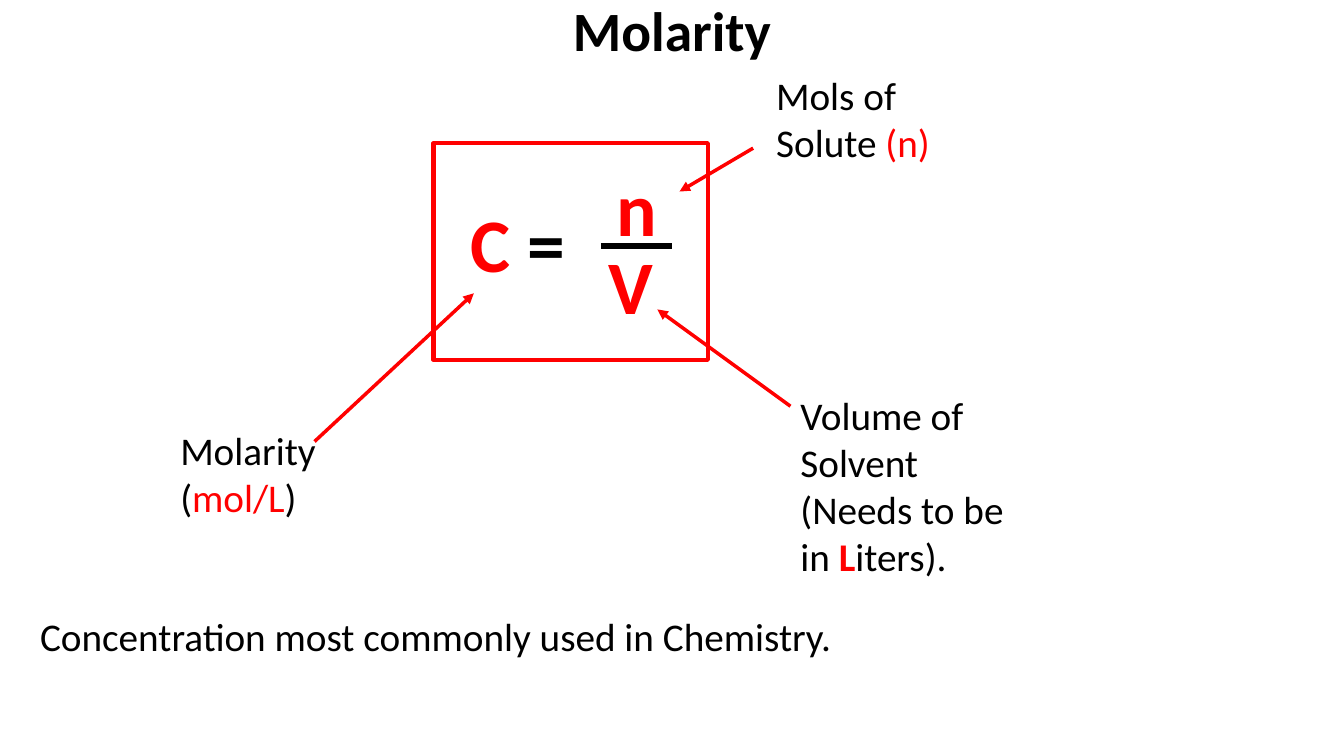
from lxml.etree import SubElement
from pptx import Presentation
from pptx.dml.color import RGBColor
from pptx.enum.shapes import MSO_CONNECTOR as Connector, MSO_SHAPE as Shape
from pptx.enum.text import MSO_ANCHOR as Anchor, PP_ALIGN as Align
from pptx.oxml.ns import qn
from pptx.util import Inches, Pt

COLORS = {"ink": "000000", "accent": "FF0000"}
FONT = "Calibri"


def color(name):
    return RGBColor.from_string(COLORS[name])


def add_text(slide, box, *pieces, size=28, align=Align.LEFT,
             anchor=Anchor.TOP, spacing=1.0):
    label = slide.shapes.add_textbox(*map(Inches, box))
    frame = label.text_frame
    frame.word_wrap = True
    frame.vertical_anchor = anchor
    paragraph = frame.paragraphs[0]
    paragraph.alignment = align
    paragraph.line_spacing = spacing
    for words, tint, bold in pieces:
        run = paragraph.add_run()
        run.text = words
        run.font.name = FONT
        run.font.size = Pt(size)
        run.font.bold = bold
        run.font.color.rgb = color(tint)


def add_line(slide, start, end, tint, width, arrow=False):
    line = slide.shapes.add_connector(
        Connector.STRAIGHT, *map(Inches, (*start, *end)))
    line.line.color.rgb = color(tint)
    line.line.width = Pt(width)
    properties = line._element.spPr
    if arrow:
        SubElement(properties.find(qn("a:ln")), qn("a:tailEnd"), type="triangle")
    SubElement(properties, qn("a:effectLst"))


def add_title(slide, box):
    add_text(slide, box, ("Molarity", "ink", True), size=39.6,
             align=Align.CENTER, anchor=Anchor.MIDDLE, spacing=0.9)


def add_formula(slide, box):
    left, top, width, height = box
    symbols = [
        (0.27, 0.48, 1.18, [("C ", "accent", True), ("=", "ink", True)]),
        (1.64, 0.9, 0.81, [("V", "accent", True)]),
        (1.72, 0.13, 0.63, [("n", "accent", True)]),
    ]
    for dx, dy, symbol_width, pieces in symbols:
        add_text(slide, (left + dx, top + dy, symbol_width, 1.01),
                 *pieces, size=54)
    bar_y = top + 1.02
    add_line(slide, (left + 1.66, bar_y), (left + 2.37, bar_y), "ink", 4)
    border = slide.shapes.add_shape(
        Shape.RECTANGLE, *map(Inches, (left, top, width, height)))
    border.shadow.inherit = False
    border.fill.background()
    border.line.color.rgb = color("accent")
    border.line.width = Pt(3)


def add_callout(slide, box, pieces, start, end):
    left, top = box[:2]
    add_text(slide, box, *pieces)
    add_line(slide, (left + start[0], top + start[1]),
             (left + end[0], top + end[1]), "accent", 2.5, arrow=True)


def add_callouts(slide):
    add_callout(slide, (1.69, 4.18, 2.53, 1.04),
                [("Molarity (", "ink", False), ("mol/L", "accent", False),
                 (")", "ink", False)],
                (1.43, 0.2), (3.01, -1.27))
    add_callout(slide, (7.6, 0.66, 2.36, 1.04),
                [("Mols of Solute ", "ink", False), ("(n)", "accent", False)],
                (-0.13, 0.81), (-0.86, 1.24))
    add_callout(slide, (7.84, 3.83, 2.53, 1.99),
                [("Volume of Solvent (Needs to be in ", "ink", False),
                 ("L", "accent", True), ("iters).", "ink", False)],
                (0, 0.2), (-1.32, -0.76))


def add_remark(slide, box):
    add_text(slide, box,
             ("Concentration most commonly used in Chemistry.", "ink", False))


def main():
    deck = Presentation()
    deck.slide_width, deck.slide_height = Inches(13.33), Inches(7.5)
    slide = deck.slides.add_slide(deck.slide_layouts[6])
    add_title(slide, (0, 0, 13.33, 0.66))
    add_formula(slide, (4.3, 1.42, 2.72, 2.15))
    add_callouts(slide)
    add_remark(slide, (0.3, 6.03, 12.43, 0.57))
    deck.save("out.pptx")


if __name__ == "__main__":
    main()
